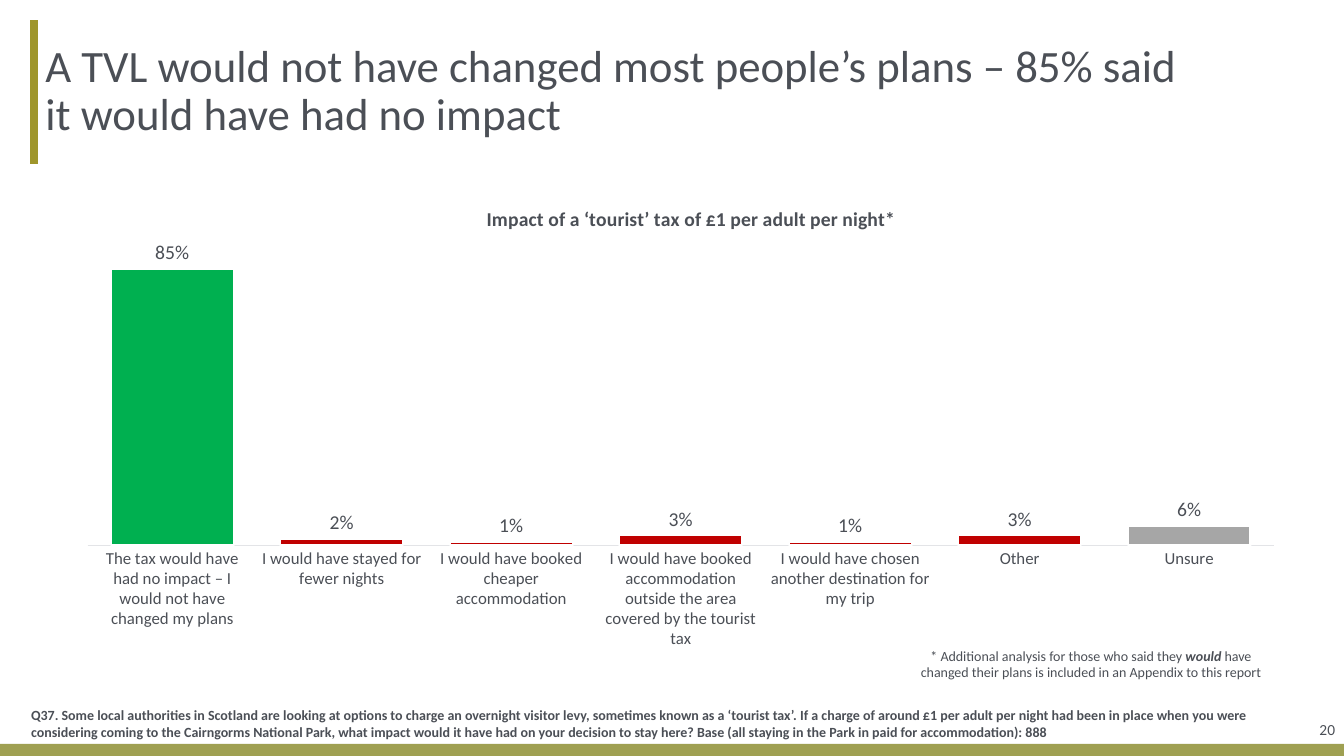
"""Build a slide charting the impact of a visitor levy on travel plans."""
from dataclasses import dataclass

from lxml.etree import SubElement
from pptx import Presentation
from pptx.chart.data import CategoryChartData as ChartData
from pptx.dml.color import RGBColor
from pptx.enum.chart import XL_CHART_TYPE as Kind
from pptx.enum.chart import XL_LABEL_POSITION as Spot
from pptx.enum.chart import XL_TICK_MARK as Tick
from pptx.enum.shapes import MSO_CONNECTOR as Link
from pptx.enum.shapes import MSO_SHAPE as Shape
from pptx.enum.text import MSO_ANCHOR as Anchor
from pptx.enum.text import MSO_AUTO_SIZE as Fit
from pptx.enum.text import PP_ALIGN as Align
from pptx.oxml import parse_xml
from pptx.oxml.ns import nsdecls, qn
from pptx.util import Inches, Pt

INK = "4B4F56"
FACE = "Calibri"
GREEN, RED, GREY = "00B050", "C00000", "A6A6A6"


@dataclass
class Note:
    """A text box, with its runs as text and emphasis pairs."""
    box: tuple[float, float, float, float]
    runs: list[tuple[str, str]]
    size: float
    align: Align
    anchor: Anchor


@dataclass
class Bar:
    """One column of the chart."""
    name: str
    share: float
    tint: str


NOTES = [
    Note((12.42, 6.95, 0.92, 0.58), [("20", "")], 11, Align.RIGHT, Anchor.MIDDLE),
    Note((0.21, 6.95, 12.57, 0.44), [(
        "Q37. Some local authorities in Scotland are looking at options to charge an overnight "
        "visitor levy, sometimes known as a ‘tourist tax’. If a charge of around £1 per adult per "
        "night had been in place when you were considering coming to the Cairngorms National Park, "
        "what impact would it have had on your decision to stay here? Base (all staying in the Park "
        "in paid for accommodation): 888", "b")], 10, Align.LEFT, Anchor.BOTTOM),
    Note((9, 6.37, 3.64, 0.44), [
        ("* Additional analysis for those who said they ", ""),
        ("would", "bi"),
        (" have changed their plans is included in an Appendix to this report", "")],
        10, Align.CENTER, Anchor.TOP),
]

BARS = [
    Bar("The tax would have had no impact – I would not have changed my plans", 0.85, GREEN),
    Bar("I would have stayed for fewer nights", 0.02, RED),
    Bar("I would have booked cheaper accommodation", 0.01, RED),
    Bar("I would have booked accommodation outside the area covered by the tourist tax", 0.03, RED),
    Bar("I would have chosen another destination for my trip", 0.01, RED),
    Bar("Other", 0.03, RED),
    Bar("Unsure", 0.06, GREY),
]


def tone(code: str) -> RGBColor:
    """Turn a hex string into a colour."""
    return RGBColor.from_string(code)


def style(font, size: float, bold: bool = False, slant: bool = False) -> None:
    """Set the face, size, colour and emphasis of a font."""
    font.name, font.size = FACE, Pt(size)
    font.bold, font.italic = bold, slant
    font.color.rgb = tone(INK)


def add_trim(slide) -> None:
    """Draw the foot band and the upright rule beside the title."""
    band = slide.shapes.add_shape(
        Shape.RECTANGLE, 0, Inches(7.38), Inches(13.33), Inches(0.12))
    band.shadow.inherit = False
    band.fill.solid()
    band.fill.fore_color.rgb = tone("9FA052")
    band.line.fill.background()
    rule = slide.shapes.add_connector(
        Link.STRAIGHT, Inches(0.34), Inches(0.2), Inches(0.34), Inches(1.63))
    rule.line.color.rgb = tone("9F962B")
    rule.line.width = Pt(6)
    SubElement(rule._element.spPr, qn("a:effectLst"))


def add_title(slide, text: str) -> None:
    """Move, fill and format the title placeholder."""
    title = slide.shapes.title
    title.left, title.top, title.width, title.height = map(Inches, (0.37, 0.2, 11.65, 1.42))
    frame = title.text_frame
    frame.text = text
    frame.word_wrap, frame.auto_size = True, Fit.NONE
    frame.vertical_anchor = Anchor.MIDDLE
    frame.margin_left = Inches(0.08)
    frame.margin_top = frame.margin_right = frame.margin_bottom = 0
    para = frame.paragraphs[0]
    para.alignment, para.line_spacing = Align.LEFT, 0.9
    style(para.runs[0].font, 32)


def add_note(slide, note: Note) -> None:
    """Draw one text box."""
    frame = slide.shapes.add_textbox(*map(Inches, note.box)).text_frame
    frame.word_wrap, frame.vertical_anchor = True, note.anchor
    para = frame.paragraphs[0]
    para.alignment = note.align
    for text, marks in note.runs:
        run = para.add_run()
        run.text = text
        style(run.font, note.size, "b" in marks, "i" in marks)


def place(node, slot: int, **parts: float) -> None:
    """Give a chart part a fixed place, in shares of the chart."""
    for old in node.findall(qn("c:layout")):
        node.remove(old)
    inner = '<c:layoutTarget val="inner"/>' if "w" in parts else ""
    modes = "".join(f'<c:{key}Mode val="edge"/>' for key in parts if key in "xy")
    sizes = "".join(f'<c:{key} val="{val}"/>' for key, val in parts.items())
    node.insert(slot, parse_xml(
        f'<c:layout {nsdecls("c")}><c:manualLayout>{inner}{modes}{sizes}'
        '</c:manualLayout></c:layout>'))


def add_chart(slide, bars: list[Bar]) -> None:
    """Draw the column chart."""
    data = ChartData(number_format="0%")
    data.categories = [bar.name for bar in bars]
    data.add_series("Series 1", [bar.share for bar in bars])
    chart = slide.shapes.add_chart(
        Kind.COLUMN_CLUSTERED, *map(Inches, (0.75, 1.81, 11.89, 4.73)), data).chart
    style(chart.font, 10)
    chart.has_legend = False
    chart.has_title = True
    frame = chart.chart_title.text_frame
    frame.text = "Impact of a ‘tourist’ tax of £1 per adult per night*"
    style(frame.paragraphs[0].runs[0].font, 14, True)
    place(chart.chart_title._element, 1, x=0.34, y=0.04)
    place(chart._chartSpace.chart.plotArea, 0, x=0.01, y=0.147, w=0.99, h=0.614)

    side = chart.value_axis
    side.minimum_scale, side.maximum_scale = 0, 0.9
    side.has_major_gridlines = side.visible = False
    base = chart.category_axis
    base.major_tick_mark = base.minor_tick_mark = Tick.NONE
    base.format.line.color.rgb = tone("E3E4E7")
    base.format.line.width = Pt(0.75)
    style(base.tick_labels.font, 12)

    plot = chart.plots[0]
    plot.gap_width, plot.overlap, plot.vary_by_categories = 38, -25, False
    plot.has_data_labels = True
    tags = plot.data_labels
    tags.show_value, tags.position = True, Spot.OUTSIDE_END
    tags.number_format, tags.number_format_is_linked = "0%", False
    style(tags.font, 14)
    for pos, bar in enumerate(bars):
        look = plot.series[0].points[pos].format
        look.fill.solid()
        look.fill.fore_color.rgb = tone(bar.tint)
        look.line.color.rgb = tone("FFFFFF")
        look.line.width = Pt(1.5)


def main() -> None:
    """Build and save the deck."""
    deck = Presentation()
    deck.slide_width, deck.slide_height = Inches(13.33), Inches(7.5)
    slide = deck.slides.add_slide(deck.slide_layouts[5])
    add_trim(slide)
    add_title(slide, "A TVL would not have changed most people’s plans – "
                     "85% said it would have had no impact")
    add_chart(slide, BARS)
    for note in NOTES:
        add_note(slide, note)
    deck.save("out.pptx")


if __name__ == "__main__":
    main()
